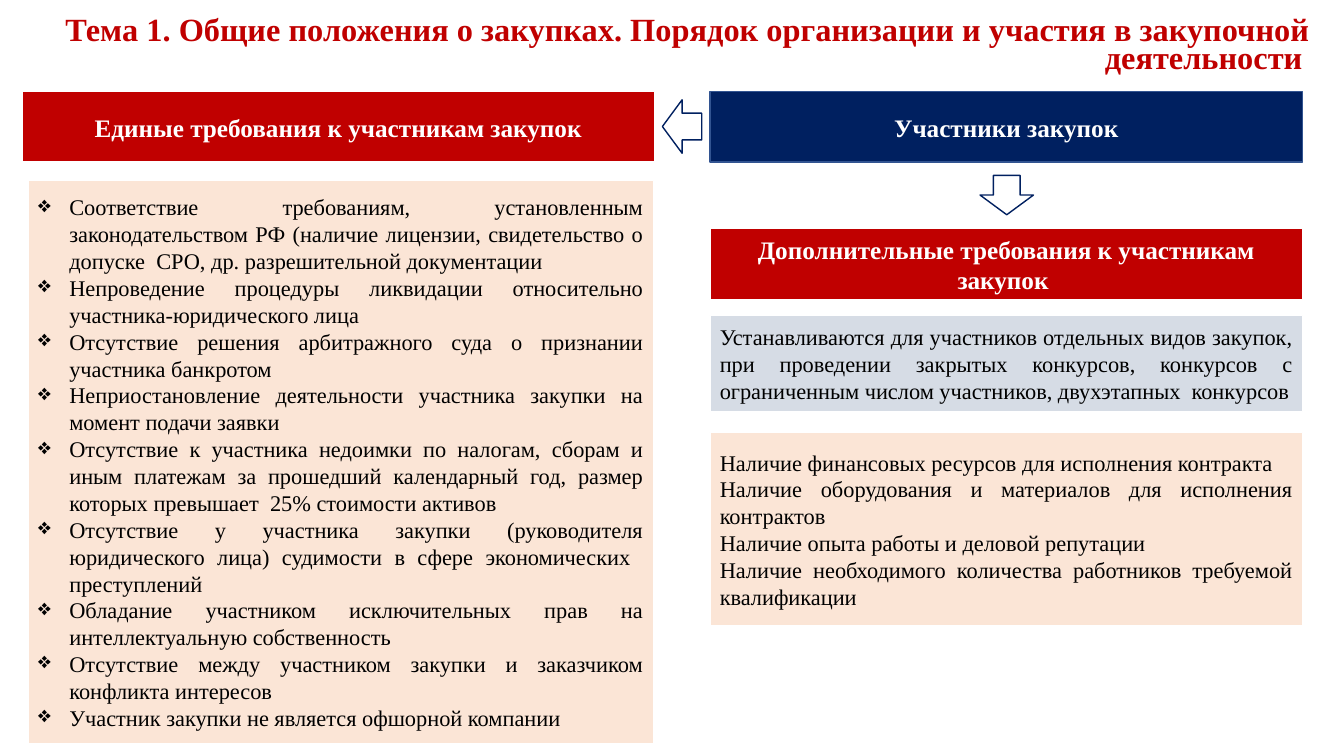
from dataclasses import dataclass

from lxml import etree
from pptx import Presentation
from pptx.dml.color import RGBColor
from pptx.enum.shapes import MSO_SHAPE
from pptx.enum.text import MSO_ANCHOR, PP_ALIGN
from pptx.oxml.ns import qn
from pptx.util import Inches, Pt

RECTANGLE, ARROW = MSO_SHAPE.RECTANGLE, MSO_SHAPE.RIGHT_ARROW
MIDDLE = MSO_ANCHOR.MIDDLE
CENTER, JUSTIFY, RIGHT = PP_ALIGN.CENTER, PP_ALIGN.JUSTIFY, PP_ALIGN.RIGHT


@dataclass(frozen=True)
class Theme:
    """Colours, typeface and type sizes of the slide."""
    font: str = "Times New Roman"
    navy: str = "002060"
    navy_edge: str = "325491"
    red: str = "C00000"
    peach: str = "FBE5D6"
    grey: str = "D6DCE5"
    white: str = "FFFFFF"
    black: str = "000000"
    title_size: float = 23.1
    heading_size: float = 18
    body_size: float = 16


THEME = Theme()
HEADING = {"size": Pt(THEME.heading_size), "bold": True, "color": THEME.white}
BODY = {"size": Pt(THEME.body_size), "bold": False, "color": THEME.black}
TITLE = {"size": Pt(THEME.title_size), "bold": True, "color": THEME.red}

RIGHT_LEFT, RIGHT_WIDTH = 7.04, 5.88
HEADER_TOP, HEADER_HEIGHT = 0.91, 0.7
BULLET_INDENT = 0.31

TITLE_TEXT = (
    "Тема 1. Общие положения о закупках. Порядок организации и участия "
    "в закупочной деятельности "
)
COMMON_REQUIREMENTS = [
    "Соответствие требованиям, установленным законодательством РФ (наличие лицензии, "
    "свидетельство о допуске  СРО, др. разрешительной документации",
    "Непроведение процедуры ликвидации относительно участника-юридического лица",
    "Отсутствие решения арбитражного суда о признании участника банкротом",
    "Неприостановление деятельности участника закупки на момент подачи заявки",
    "Отсутствие к участника недоимки по налогам, сборам и иным платежам за прошедший "
    "календарный год, размер которых превышает  25% стоимости активов",
    "Отсутствие у участника закупки (руководителя юридического лица) судимости "
    "в сфере экономических  преступлений",
    "Обладание участником исключительных прав на интеллектуальную собственность",
    "Отсутствие между участником закупки и заказчиком конфликта интересов",
    "Участник закупки не является офшорной компании",
]
ADDITIONAL_SCOPE = [
    "Устанавливаются для участников отдельных видов закупок, при проведении закрытых "
    "конкурсов, конкурсов с ограниченным числом участников, двухэтапных  конкурсов",
]
ADDITIONAL_REQUIREMENTS = [
    "Наличие финансовых ресурсов для исполнения контракта",
    "Наличие оборудования и материалов для исполнения контрактов",
    "Наличие опыта работы и деловой репутации",
    "Наличие необходимого количества работников требуемой квалификации",
]


def add_bullet(paragraph):
    """Give a paragraph a hanging diamond bullet."""
    properties = paragraph._p.get_or_add_pPr()
    indent = Inches(BULLET_INDENT)
    properties.set("marL", str(indent))
    properties.set("indent", str(-indent))
    etree.SubElement(properties, qn("a:buChar")).set("char", "❖")


def write_text(frame, texts, text_format, alignment, bulleted=False, line_spacing=None):
    """Fill a text frame with one paragraph per text."""
    frame.word_wrap = True
    for index, text in enumerate(texts):
        paragraph = frame.paragraphs[0] if index == 0 else frame.add_paragraph()
        paragraph.alignment = alignment
        if line_spacing:
            paragraph.line_spacing = line_spacing
        if bulleted:
            add_bullet(paragraph)
        run = paragraph.add_run()
        run.text = text
        run.font.name = THEME.font
        for name, value in text_format.items():
            if name == "color":
                run.font.color.rgb = RGBColor.from_string(value)
            else:
                setattr(run.font, name, value)


def add_shape(slide, kind, box, fill, line):
    """Add a flat preset shape with a thin outline."""
    shape = slide.shapes.add_shape(kind, *map(Inches, box))
    shape.shadow.inherit = False
    shape.fill.solid()
    shape.fill.fore_color.rgb = RGBColor.from_string(fill)
    shape.line.color.rgb = RGBColor.from_string(line)
    shape.line.width = Pt(1)
    return shape


def add_panel(slide, box, fill, texts, text_format, alignment, line=THEME.white, bulleted=False):
    """Add a rectangle with vertically centred text."""
    shape = add_shape(slide, RECTANGLE, box, fill, line)
    shape.text_frame.vertical_anchor = MIDDLE
    write_text(shape.text_frame, texts, text_format, alignment, bulleted)


def add_heading(slide, box, fill, text, line=THEME.white):
    """Add a coloured heading bar."""
    add_panel(slide, box, fill, [text], HEADING, CENTER, line)


def add_arrow(slide, left, top, rotation):
    """Add an outlined block arrow turned by the given angle."""
    arrow = add_shape(slide, ARROW, (left, top, 0.39, 0.53), THEME.white, THEME.navy)
    arrow.rotation = rotation


def add_title(slide):
    """Add the right-aligned topic title."""
    box = slide.shapes.add_textbox(*map(Inches, (0, 0.15, 13.1, 0.65)))
    write_text(box.text_frame, [TITLE_TEXT], TITLE, RIGHT, line_spacing=0.7)


def right_box(top, height):
    """Return the box of a block in the right column."""
    return RIGHT_LEFT, top, RIGHT_WIDTH, height


def main():
    """Build and save the slide."""
    presentation = Presentation()
    presentation.slide_width, presentation.slide_height = Inches(13.33), Inches(7.5)
    slide = presentation.slides.add_slide(presentation.slide_layouts[6])

    add_heading(slide, right_box(HEADER_TOP, HEADER_HEIGHT), THEME.navy,
                "Участники закупок", THEME.navy_edge)
    add_heading(slide, (0.22, HEADER_TOP, 6.27, HEADER_HEIGHT), THEME.red,
                "Единые требования к участникам закупок")
    add_heading(slide, right_box(2.27, HEADER_HEIGHT), THEME.red,
                "Дополнительные требования к участникам закупок ")

    add_panel(slide, (0.28, 1.79, 6.2, 5.59), THEME.peach, COMMON_REQUIREMENTS,
              BODY, JUSTIFY, bulleted=True)
    add_panel(slide, right_box(3.13, 0.95), THEME.grey, ADDITIONAL_SCOPE, BODY, JUSTIFY)
    add_panel(slide, right_box(4.29, 1.92), THEME.peach, ADDITIONAL_REQUIREMENTS, BODY, JUSTIFY)

    add_arrow(slide, 6.57, 0.99, 180)
    add_arrow(slide, 9.79, 1.67, 90)
    add_title(slide)
    presentation.save("out.pptx")


if __name__ == "__main__":
    main()
